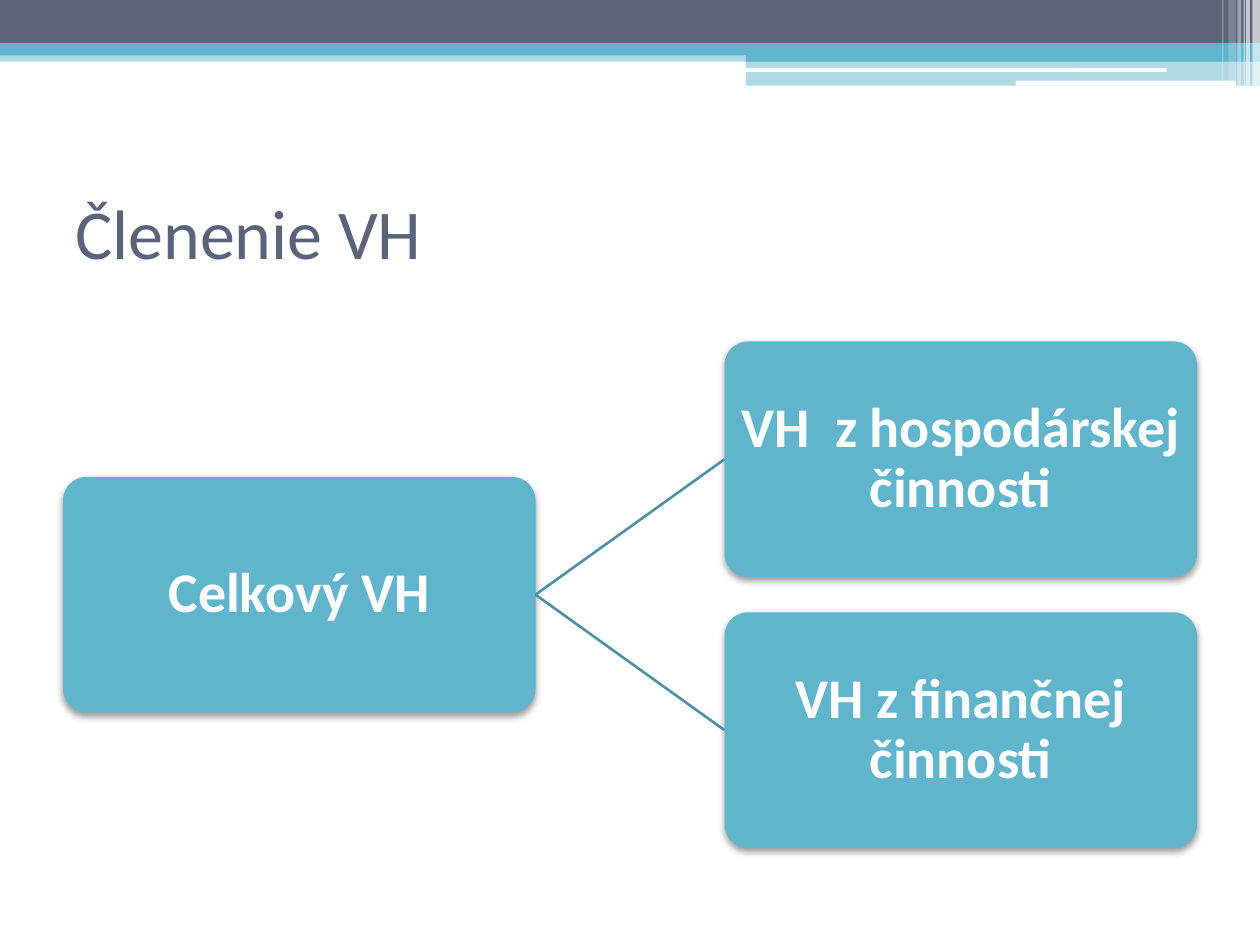
from dataclasses import dataclass

from lxml import etree
from pptx import Presentation
from pptx.dml.color import RGBColor
from pptx.enum.shapes import MSO_CONNECTOR, MSO_SHAPE
from pptx.enum.text import MSO_ANCHOR, PP_ALIGN
from pptx.oxml.ns import qn
from pptx.util import Inches, Pt

RECTANGLE = MSO_SHAPE.RECTANGLE
ROUNDED = MSO_SHAPE.ROUNDED_RECTANGLE
STRAIGHT = MSO_CONNECTOR.STRAIGHT
MIDDLE = MSO_ANCHOR.MIDDLE
LEFT, CENTER = PP_ALIGN.LEFT, PP_ALIGN.CENTER
LEFT_SIDE, RIGHT_SIDE = 1, 3


@dataclass(frozen=True)
class Theme:
    font: str = "Calibri"
    slate: str = "5A6378"
    aqua: str = "60B5CC"
    link: str = "4D91A3"
    white: str = "FFFFFF"
    shadow: str = "000000"
    title_size: int = 40
    box_size: int = 32
    link_width: float = 1.5


class SlideBuilder:
    """Draws styled elements on the current slide."""

    def __init__(self, slide, theme):
        self.slide = slide
        self.theme = theme

    def add_alpha(self, color_element, percent):
        etree.SubElement(color_element, qn("a:alpha"), val=str(percent * 1000))

    def bar(self, left, top, width, height, color, opacity=100, kind=RECTANGLE):
        shape = self.slide.shapes.add_shape(
            kind, Inches(left), Inches(top), Inches(width), Inches(height))
        shape.shadow.inherit = False
        shape.fill.solid()
        shape.fill.fore_color.rgb = RGBColor.from_string(color)
        shape.line.fill.background()
        if opacity < 100:
            color_element = shape.element.spPr.find(
                f"{qn('a:solidFill')}/{qn('a:srgbClr')}")
            self.add_alpha(color_element, opacity)
        return shape

    def add_text(self, shape, text, size, color, alignment, bold=False):
        frame = shape.text_frame
        frame.word_wrap = True
        frame.vertical_anchor = MIDDLE
        paragraph = frame.paragraphs[0]
        paragraph.alignment = alignment
        run = paragraph.add_run()
        run.text = text
        run.font.name = self.theme.font
        run.font.size = Pt(size)
        run.font.bold = bold
        run.font.color.rgb = RGBColor.from_string(color)
        return paragraph

    def title(self, text, left, top, width, height):
        shape = self.slide.shapes.add_textbox(
            Inches(left), Inches(top), Inches(width), Inches(height))
        self.add_text(shape, text, self.theme.title_size, self.theme.slate, LEFT)

    def box(self, text, left, top, width, height):
        shape = self.bar(left, top, width, height, self.theme.aqua, kind=ROUNDED)
        shape.adjustments[0] = 0.1
        self.add_shadow(shape)
        frame = shape.text_frame
        frame.margin_left = frame.margin_right = Inches(0.02)
        frame.margin_top = frame.margin_bottom = Inches(0.02)
        paragraph = self.add_text(
            shape, text, self.theme.box_size, self.theme.white, CENTER, bold=True)
        paragraph.line_spacing = 0.9
        return shape

    def add_shadow(self, shape):
        effects = shape.element.spPr.find(qn("a:effectLst"))
        shadow = etree.SubElement(
            effects, qn("a:outerShdw"), blurRad=str(Pt(4.1)), dist=str(Pt(2)),
            dir="5400000", rotWithShape="0")
        color_element = etree.SubElement(
            shadow, qn("a:srgbClr"), val=self.theme.shadow)
        self.add_alpha(color_element, 40)

    def link(self, parent, child):
        connector = self.slide.shapes.add_connector(STRAIGHT, 0, 0, 0, 0)
        connector.begin_connect(parent, RIGHT_SIDE)
        connector.end_connect(child, LEFT_SIDE)
        connector.line.color.rgb = RGBColor.from_string(self.theme.link)
        connector.line.width = Pt(self.theme.link_width)
        etree.SubElement(connector.element.spPr, qn("a:effectLst"))


def draw_header(builder):
    theme = builder.theme
    builder.bar(0, 0.4, 10, 0.09, theme.aqua, 50)
    builder.bar(0, 0, 10, 0.34, theme.slate)
    builder.bar(0, 0.34, 10, 0.1, theme.aqua)
    builder.bar(5.92, 0.39, 4.08, 0.1, theme.aqua)
    builder.bar(5.92, 0.48, 4.08, 0.2, theme.aqua, 50)
    builder.bar(5.91, 0.54, 3.35, 0.03, theme.white, kind=ROUNDED)
    builder.bar(8.06, 0.64, 1.75, 0.04, theme.white, kind=ROUNDED)
    stripes = [
        (9.94, 0.06, 0.68, 65),
        (9.89, 0.03, 0.68, 65),
        (9.87, 0.01, 0.68, 60),
        (9.82, 0.03, 0.68, 40),
        (9.75, 0.06, 0.64, 20),
        (9.7, 0.01, 0.64, 30),
    ]
    for left, width, height, opacity in stripes:
        builder.bar(left, 0, width, height, theme.white, opacity)


def draw_hierarchy(builder):
    width, height = 3.75, 1.87
    root_left, branch_left = 0.5, 5.75
    first_top, pitch = 2.71, 2.15
    branches = ["VH  z hospodárskej činnosti", "VH z finančnej činnosti"]
    root_top = first_top + pitch * (len(branches) - 1) / 2
    root = builder.box("Celkový VH", root_left, root_top, width, height)
    for index, text in enumerate(branches):
        branch = builder.box(
            text, branch_left, first_top + index * pitch, width, height)
        builder.link(root, branch)


def main():
    presentation = Presentation()
    presentation.slide_width = Inches(10)
    presentation.slide_height = Inches(7.5)
    slide = presentation.slides.add_slide(presentation.slide_layouts[6])
    builder = SlideBuilder(slide, Theme())
    draw_header(builder)
    builder.title("Členenie VH", 0.5, 1.25, 9, 1.17)
    draw_hierarchy(builder)
    presentation.save("out.pptx")


if __name__ == "__main__":
    main()
